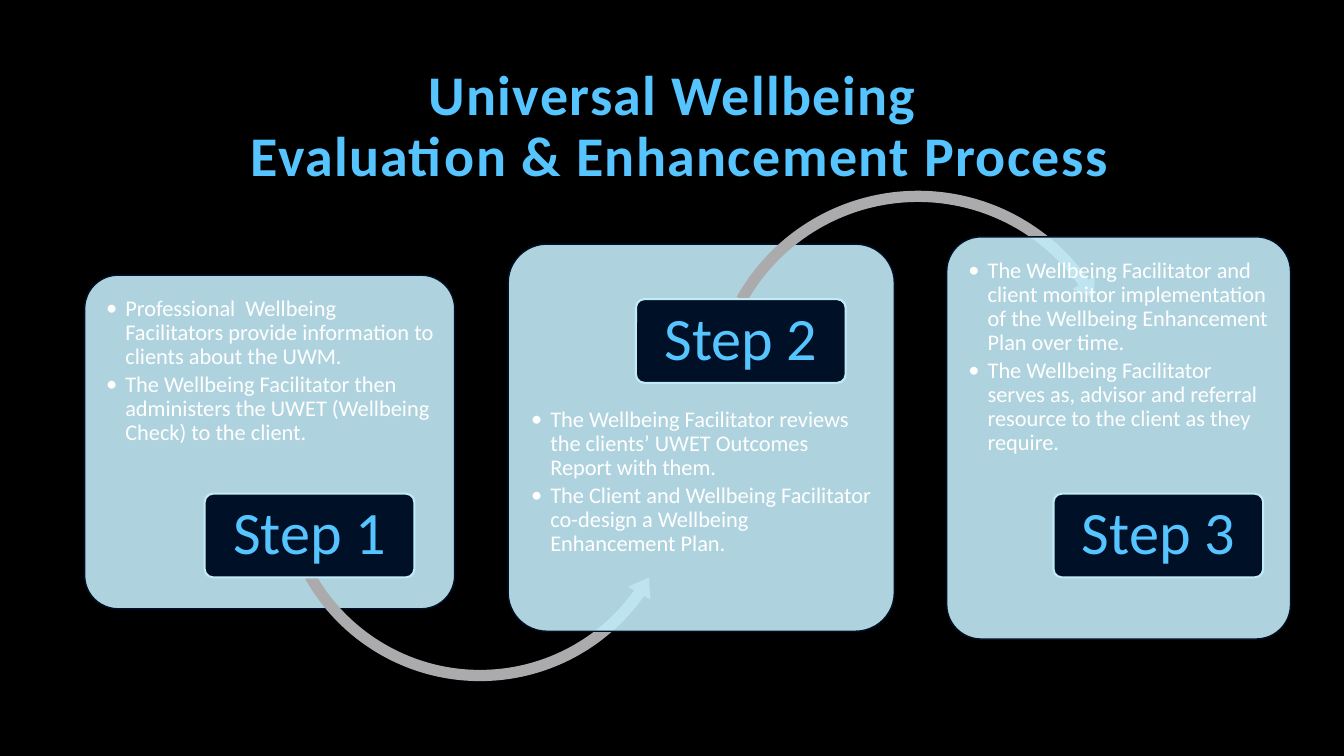
"""Build the three-step wellbeing evaluation and enhancement process slide."""
from dataclasses import dataclass
from typing import Optional

from lxml import etree
from pptx import Presentation
from pptx import util as u
from pptx.dml.color import RGBColor
from pptx.enum import shapes, text
from pptx.oxml.ns import qn

WIDTH, HEIGHT = u.Inches(13.33), u.Inches(7.5)
FONT = "Calibri"
BLACK, NAVY, SKY = "000000", "001027", "56C5FF"
ICE, GREY, WHITE = "C1EBF7", "ABABAD", "FFFFFF"
CORNER = 0.1
LEFT_INSET, RIGHT_INSET, TOP_INSET = 0.87, 0.6, 1.6
TITLE_LINES = ["Universal Wellbeing ", "Evaluation & Enhancement Process"]


@dataclass(frozen=True)
class Area:
    """A rectangle in percent of the slide's width and height."""
    left: float
    top: float
    width: float
    height: float

    def box(self) -> tuple[int, int, int, int]:
        return (across(self.left), down(self.top),
                across(self.width), down(self.height))


@dataclass(frozen=True)
class Arc:
    """A circular arrow with its preset and adjustments."""
    area: Area
    preset: shapes.MSO_SHAPE
    bends: tuple[float, ...]


@dataclass(frozen=True)
class Step:
    """A card with its points, its badge and the arrow leaving it."""
    card: Area
    badge_left: float
    badge_top: float
    points: tuple[str, ...]
    text_top: float = TOP_INSET
    arc: Optional[Arc] = None


STEPS = [
    Step(Area(6.3, 36.4, 27.53, 44.13), 15.23, 65.3,
         ("Professional  Wellbeing Facilitators provide information to "
          "clients about the UWM.",
          "The Wellbeing Facilitator then administers the UWET "
          "(Wellbeing Check) to the client."),
         arc=Arc(Area(20.26, 36.13, 30.91, 54.93),
                 shapes.MSO_SHAPE.LEFT_CIRCULAR_ARROW,
                 (0.027, 3.244, 21.139, 90.384, 0.031))),
    Step(Area(37.81, 32.3, 28.73, 51.2), 47.32, 39.57,
         ("The Wellbeing Facilitator reviews the clients’ UWET Outcomes "
          "Report with them.",
          "The Client and Wellbeing Facilitator co-design a Wellbeing "
          "Enhancement Plan."),
         text_top=20.2,
         arc=Arc(Area(52.29, 24.27, 32.03, 56.93),
                 shapes.MSO_SHAPE.CIRCULAR_ARROW,
                 (0.026, 3.126, 194.974, 125.611, 0.03))),
    Step(Area(70.44, 31.33, 25.58, 53.2), 78.39, 65.3,
         ("The Wellbeing Facilitator and client monitor implementation of "
          "the Wellbeing Enhancement Plan over time.",
          "The Wellbeing Facilitator serves as, advisor and referral "
          "resource to the client as they require.")),
]


def across(share: float) -> int:
    return round(WIDTH * share / 100)


def down(share: float) -> int:
    return round(HEIGHT * share / 100)


def paint(fill, colour: str) -> None:
    fill.solid()
    fill.fore_color.rgb = RGBColor.from_string(colour)


def write(paragraph, words: str, size: float, colour: str):
    run = paragraph.add_run()
    run.text = words
    run.font.name = FONT
    run.font.size = u.Pt(size)
    run.font.color.rgb = RGBColor.from_string(colour)
    return run


def add_block(slide, preset, area: Area, bends, colour: str,
              outline: str = "", weight: float = 0):
    block = slide.shapes.add_shape(preset, *area.box())
    block.shadow.inherit = False
    for index, bend in enumerate(bends):
        block.adjustments[index] = bend
    paint(block.fill, colour)
    if outline:
        paint(block.line.fill, outline)
        block.line.width = u.Pt(weight)
    else:
        block.line.fill.background()
    return block


def set_frame(frame, anchor, left: float, right: float,
              top: float, bottom: float) -> None:
    frame.word_wrap = True
    frame.vertical_anchor = anchor
    frame.margin_left, frame.margin_right = across(left), across(right)
    frame.margin_top, frame.margin_bottom = down(top), down(bottom)


def add_card(slide, step: Step) -> None:
    card = add_block(slide, shapes.MSO_SHAPE.ROUNDED_RECTANGLE, step.card,
                     [CORNER], ICE, NAVY, 1)
    tint = card.fill._xPr.find(qn("a:solidFill")).find(qn("a:srgbClr"))
    etree.SubElement(tint, qn("a:alpha"), val="90000")
    frame = card.text_frame
    set_frame(frame, text.MSO_ANCHOR.TOP, LEFT_INSET, RIGHT_INSET,
              step.text_top, TOP_INSET)
    for index, point in enumerate(step.points):
        paragraph = frame.add_paragraph() if index else frame.paragraphs[0]
        paragraph.level = 1
        paragraph.alignment = text.PP_ALIGN.LEFT
        paragraph.line_spacing = 0.9
        paragraph.space_after = u.Pt(2.4)
        properties = paragraph._p.get_or_add_pPr()
        properties.set("marL", str(u.Inches(0.19)))
        properties.set("indent", str(-u.Inches(0.19)))
        etree.SubElement(properties, qn("a:buFont"), typeface=FONT)
        etree.SubElement(properties, qn("a:buChar"), char="•")
        write(paragraph, point, 16, WHITE)


def add_badge(slide, step: Step, number: int) -> None:
    area = Area(step.badge_left, step.badge_top, 15.6, 11.07)
    badge = add_block(slide, shapes.MSO_SHAPE.ROUNDED_RECTANGLE, area,
                      [CORNER], NAVY, ICE, 1.5)
    set_frame(badge.text_frame, text.MSO_ANCHOR.MIDDLE, 0.6, 0.6, 0.5, 0.5)
    label = badge.text_frame.paragraphs[0]
    label.alignment = text.PP_ALIGN.CENTER
    label.line_spacing = 0.9
    write(label, f"Step {number}", 43, SKY)


def add_title(slide) -> None:
    title = slide.shapes.title
    title.left, title.top, title.width, title.height = Area(
        6.3, 5.6, 88.6, 20).box()
    frame = title.text_frame
    frame.auto_size = text.MSO_AUTO_SIZE.NONE
    set_frame(frame, text.MSO_ANCHOR.BOTTOM, 0.75, 0.75, 0.67, 0.67)
    heading = frame.paragraphs[0]
    heading.alignment = text.PP_ALIGN.CENTER
    heading.line_spacing = 0.9
    for index, line in enumerate(TITLE_LINES):
        if index:
            heading.add_line_break()
        run = write(heading, line, 40, SKY)
        run.font.bold = True
        run.font._element.set("spc", "100")


def main() -> None:
    deck = Presentation()
    deck.slide_width, deck.slide_height = WIDTH, HEIGHT
    slide = deck.slides.add_slide(deck.slide_layouts.get_by_name("Title Only"))
    paint(slide.background.fill, BLACK)
    add_title(slide)
    for number, step in enumerate(STEPS, start=1):
        add_card(slide, step)
        if step.arc:
            add_block(slide, step.arc.preset, step.arc.area,
                      step.arc.bends, GREY)
        add_badge(slide, step, number)
    deck.save("out.pptx")


if __name__ == "__main__":
    main()
